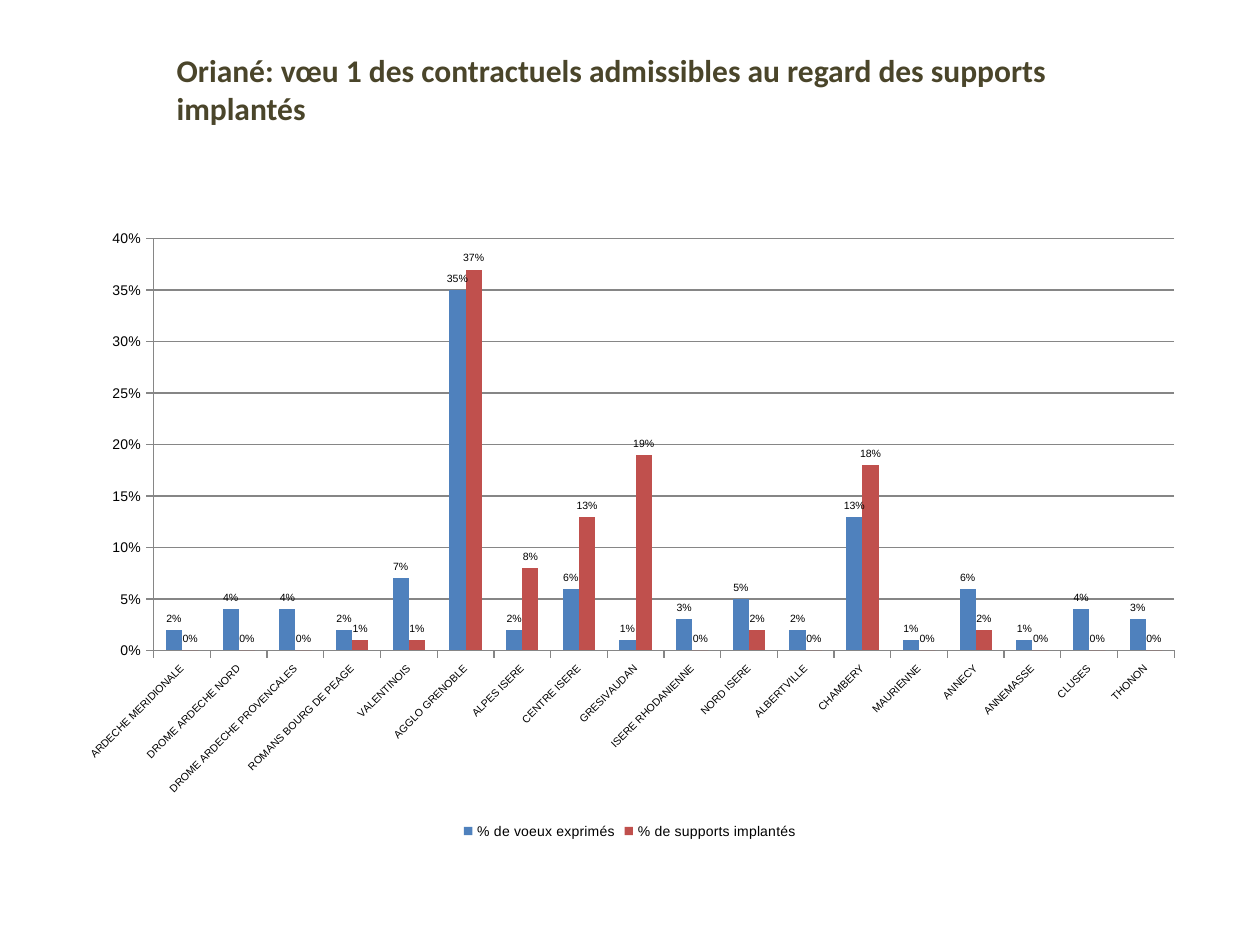
from lxml import etree
from pptx import Presentation
from pptx import util as u
from pptx.chart.data import CategoryChartData
from pptx.dml.color import RGBColor
from pptx.enum import chart as ch, text
from pptx.oxml.ns import qn

SCALE = 914400 / 126
OLIVE = RGBColor(0x4A, 0x45, 0x2A)
BLACK = RGBColor(0, 0, 0)
GREY = RGBColor(0x86, 0x86, 0x86)
BLUE = RGBColor(0x4F, 0x81, 0xBD)
RED = RGBColor(0xC0, 0x50, 0x4D)

RATES = [
    ("ARDECHE MERIDIONALE", 0.02, 0),
    ("DROME ARDECHE NORD", 0.04, 0),
    ("DROME ARDECHE PROVENCALES", 0.04, 0),
    ("ROMANS BOURG DE PEAGE", 0.02, 0.01),
    ("VALENTINOIS", 0.07, 0.01),
    ("AGGLO GRENOBLE", 0.35, 0.37),
    ("ALPES ISERE", 0.02, 0.08),
    ("CENTRE ISERE", 0.06, 0.13),
    ("GRESIVAUDAN", 0.01, 0.19),
    ("ISERE RHODANIENNE", 0.03, 0),
    ("NORD ISERE", 0.05, 0.02),
    ("ALBERTVILLE", 0.02, 0),
    ("CHAMBERY", 0.13, 0.18),
    ("MAURIENNE", 0.01, 0),
    ("ANNECY", 0.06, 0.02),
    ("ANNEMASSE", 0.01, 0),
    ("CLUSES", 0.04, 0),
    ("THONON", 0.03, 0),
]


def px(*lengths):
    return [u.Emu(round(n * SCALE)) for n in lengths]


class Deck:
    title_font = "Calibri"
    chart_font = "Arial"

    def __init__(self, width, height):
        self.prs = Presentation()
        self.prs.slide_width, self.prs.slide_height = px(width, height)
        self.s = self.prs.slides.add_slide(self.prs.slide_layouts[5])

    def style(self, font, name, size, color, bold=False):
        font.name, font.size, font.bold = name, u.Pt(size), bold
        font.color.rgb = color

    def title(self, words, *box):
        sp = self.s.shapes.title
        sp.left, sp.top, sp.width, sp.height = px(*box)
        tf = sp.text_frame
        tf.text = words
        tf.word_wrap = True
        tf.auto_size = text.MSO_AUTO_SIZE.NONE
        tf.vertical_anchor = text.MSO_ANCHOR.TOP
        p = tf.paragraphs[0]
        p.alignment = text.PP_ALIGN.LEFT
        self.style(p.runs[0].font, self.title_font, 18, OLIVE, True)

    def columns(self, rows, names, colors, *box):
        cats, *values = zip(*rows)
        data = CategoryChartData(number_format="0%")
        data.categories = cats
        for name, vals in zip(names, values):
            data.add_series(name, vals)
        chart = self.s.shapes.add_chart(
            ch.XL_CHART_TYPE.COLUMN_CLUSTERED, *px(*box), data).chart
        self.style(chart.font, self.title_font, 10, BLACK)
        chart.has_title = False
        chart.has_legend = True
        chart.legend.position = ch.XL_LEGEND_POSITION.BOTTOM
        chart.legend.include_in_layout = False
        self.style(chart.legend.font, self.chart_font, 8, BLACK)
        plot = chart.plots[0]
        plot.gap_width, plot.overlap = 150, 0
        plot.vary_by_categories = False
        for series, color in zip(plot.series, colors):
            self.series(series, color)
        self.axis(chart.category_axis, 6)
        self.axis(chart.value_axis, 8)
        chart.category_axis._element.find(
            qn("c:txPr")).find(qn("a:bodyPr")).set("rot", "-2700000")
        self.scale_values(chart.value_axis)
        self.place_plot(chart, x=0.08, y=0.03, w=0.9, h=0.66)

    def series(self, series, color):
        series.format.fill.solid()
        series.format.fill.fore_color.rgb = color
        series.invert_if_negative = False
        labels = series.data_labels
        labels.show_value = True
        labels.position = ch.XL_LABEL_POSITION.OUTSIDE_END
        labels.number_format = "0%"
        labels.number_format_is_linked = False
        self.style(labels.font, self.chart_font, 6, BLACK)

    def axis(self, axis, size):
        axis.major_tick_mark = ch.XL_TICK_MARK.OUTSIDE
        axis.format.line.color.rgb = GREY
        self.style(axis.tick_labels.font, self.chart_font, size, BLACK)

    def scale_values(self, axis):
        axis.minimum_scale, axis.maximum_scale = 0, 0.4
        axis.major_unit = 0.05
        axis.has_major_gridlines = True
        axis.major_gridlines.format.line.color.rgb = GREY
        axis.tick_labels.number_format = "0%"
        axis.tick_labels.number_format_is_linked = False

    def place_plot(self, chart, **box):
        area = chart._chartSpace.chart.plotArea
        for old in area.findall(qn("c:layout")):
            area.remove(old)
        layout = etree.Element(qn("c:layout"))
        area.insert(0, layout)
        manual = etree.SubElement(layout, qn("c:manualLayout"))
        settings = {"layoutTarget": "inner", "xMode": "edge", "yMode": "edge", **box}
        for tag, value in settings.items():
            etree.SubElement(manual, qn("c:" + tag)).set("val", str(value))


def main():
    deck = Deck(1260, 945)
    deck.title("Oriané: vœu 1 des contractuels admissibles au regard des "
               "supports implantés", 164, 45, 973, 89)
    deck.columns(RATES, ["% de voeux exprimés", "% de supports implantés"],
                 [BLUE, RED], 63, 220, 1134, 624)
    deck.prs.save("out.pptx")


if __name__ == "__main__":
    main()
